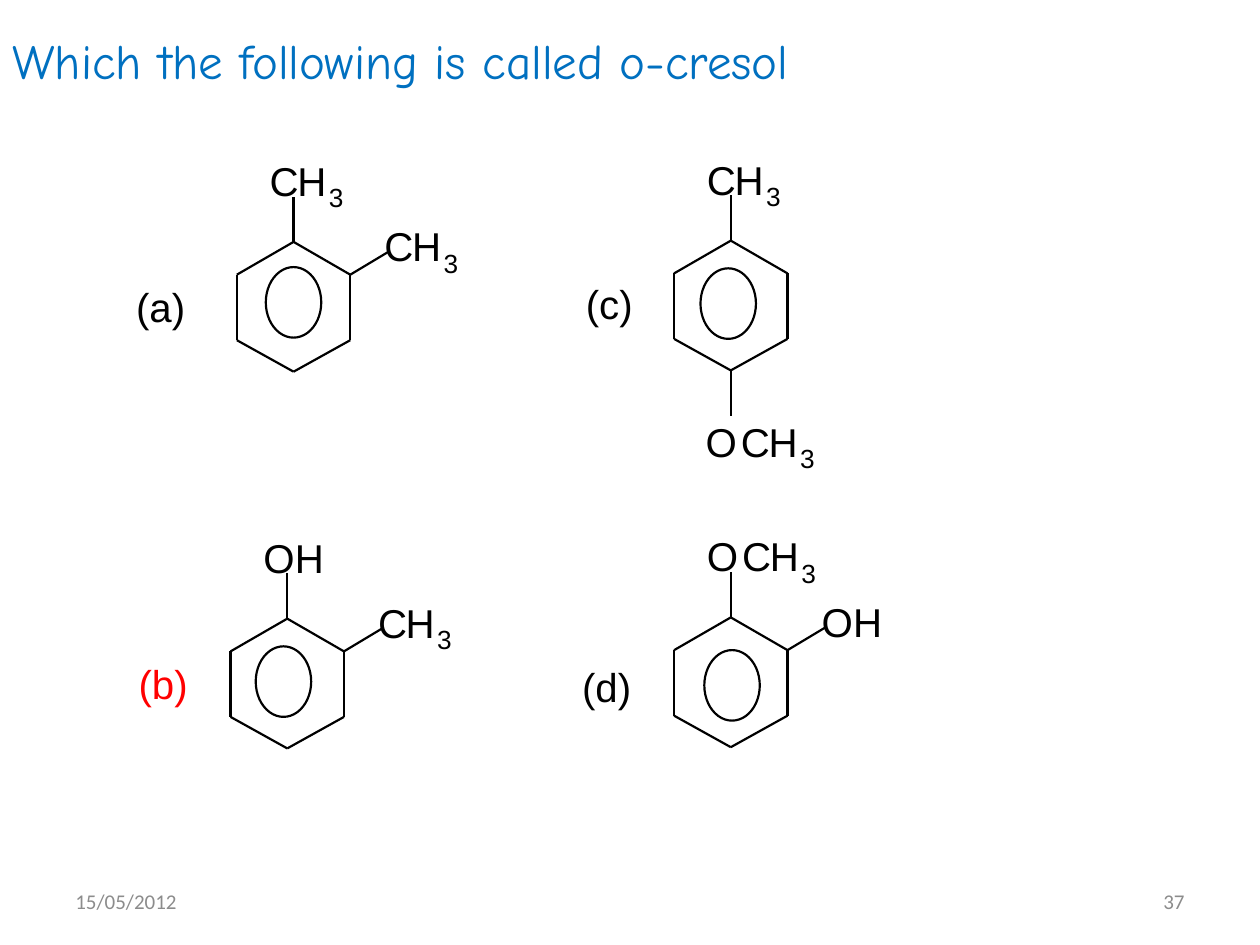
import itertools

import pptx
import pptx.dml.color
import pptx.enum.shapes
import pptx.enum.text
import pptx.oxml.ns
import pptx.util
from lxml import etree

Inches = pptx.util.Inches
ALIGN = pptx.enum.text.PP_ALIGN
ANCHOR = pptx.enum.text.MSO_ANCHOR

TITLE = "Which the following is called o-cresol"
DATE = "15/05/2012"
PAGE_NUMBER = "37"

MOLECULES = [
    {"label": "(a)", "label_at": (1.08, 2.24), "apex": (2.33, 1.92), "circle_at": (2.11, 2.12),
     "groups": {"top": "CH3", "right": "CH3"}},
    {"label": "(b)", "label_at": (1.1, 5.23), "apex": (2.28, 4.91), "circle_at": (2.03, 5.13),
     "groups": {"top": "OH", "right": "CH3"}, "correct": True},
    {"label": "(c)", "label_at": (4.65, 2.22), "apex": (5.8, 1.91), "circle_at": (5.56, 2.13),
     "groups": {"top": "CH3", "bottom": "OCH3"}},
    {"label": "(d)", "label_at": (4.62, 5.26), "apex": (5.8, 4.9), "circle_at": (5.59, 5.16),
     "groups": {"top": "OCH3", "right": "OH"}},
]

THEME = {
    "title": ("Comic Neue", 28, "0070C0"),
    "footer": ("Calibri", 12, "8C8C8C"),
    "atom": ("Arial", 23, "000000"),
    "count": ("Arial", 15, "000000"),
    "answer": ("Arial", 23, "FF0000"),
    "line": ("000000", 1.25),
}

RING = [(0, 0), (0.45, 0.26), (0.45, 0.78), (0, 1.03), (-0.45, 0.78), (-0.45, 0.26)]
CIRCLE_SIZE = (0.44, 0.56)
BONDS = {
    "top": ((0, 0), (0, -0.36)),
    "right": ((0.45, 0.26), (0.75, 0.08)),
    "bottom": ((0, 1.03), (0, 1.39)),
}
GROUP_OFFSETS = {"top": (-0.19, -0.68), "right": (0.72, -0.16), "bottom": (-0.2, 1.4)}
ADVANCES = {"OC": 0.28, "OH": 0.25, "CH": 0.22, "H3": 0.25}
ATOM_SIZE = (0.38, 0.43)
COUNT_SIZE = (0.21, 0.28)
COUNT_DROP = 0.2
LABEL_SIZE = (0.53, 0.43)


def color(value):
    return pptx.dml.color.RGBColor.from_string(value)


def shift(origin, offset):
    return origin[0] + offset[0], origin[1] + offset[1]


def style_line(shape):
    line_color, width = THEME["line"]
    shape.line.color.rgb = color(line_color)
    shape.line.width = pptx.util.Pt(width)


def add_text(slide, text, position, size, style, inset=0, anchor=ANCHOR.TOP, alignment=ALIGN.LEFT):
    shape = slide.shapes.add_textbox(*map(Inches, position + size))
    frame = shape.text_frame
    frame.word_wrap = True
    frame.vertical_anchor = anchor
    frame.margin_left = frame.margin_right = Inches(inset)
    frame.margin_top = frame.margin_bottom = Inches(inset / 2)
    paragraph = frame.paragraphs[0]
    paragraph.text = text
    paragraph.alignment = alignment
    font_name, font_size, font_color = THEME[style]
    paragraph.font.name = font_name
    paragraph.font.size = pptx.util.Pt(font_size)
    paragraph.font.color.rgb = color(font_color)


def add_bond(slide, start, end):
    connector = slide.shapes.add_connector(
        pptx.enum.shapes.MSO_CONNECTOR.STRAIGHT, *map(Inches, start + end))
    style_line(connector)
    etree.SubElement(connector._element.spPr, pptx.oxml.ns.qn("a:effectLst"))


def add_formula(slide, formula, position):
    left, top = position
    for symbol, following in itertools.zip_longest(formula, formula[1:], fillvalue=""):
        if symbol.isdigit():
            add_text(slide, symbol, (left, top + COUNT_DROP), COUNT_SIZE, "count")
        else:
            add_text(slide, symbol, (left, top), ATOM_SIZE, "atom")
        left += ADVANCES.get(symbol + following, 0)


def add_molecule(slide, molecule):
    apex = molecule["apex"]
    corners = [shift(apex, offset) for offset in RING]
    for start, end in zip(corners, corners[1:] + corners[:1]):
        add_bond(slide, start, end)
    for place, formula in molecule["groups"].items():
        add_bond(slide, *(shift(apex, offset) for offset in BONDS[place]))
        add_formula(slide, formula, shift(apex, GROUP_OFFSETS[place]))
    circle = slide.shapes.add_shape(
        pptx.enum.shapes.MSO_SHAPE.OVAL, *map(Inches, molecule["circle_at"] + CIRCLE_SIZE))
    circle.shadow.inherit = False
    circle.fill.background()
    style_line(circle)
    style = "answer" if molecule.get("correct") else "atom"
    add_text(slide, molecule["label"], molecule["label_at"], LABEL_SIZE, style)


def main():
    presentation = pptx.Presentation()
    presentation.slide_width = Inches(10)
    presentation.slide_height = Inches(7.5)
    slide = presentation.slides.add_slide(presentation.slide_layouts[6])
    add_text(slide, TITLE, (0, 0.19), (7.06, 1.04), "title", inset=0.1)
    add_text(slide, PAGE_NUMBER, (7.17, 6.95), (2.33, 0.4), "footer", 0.1, ANCHOR.MIDDLE, ALIGN.RIGHT)
    add_text(slide, DATE, (0.5, 6.95), (2.33, 0.4), "footer", 0.1, ANCHOR.MIDDLE)
    for molecule in MOLECULES:
        add_molecule(slide, molecule)
    presentation.save("out.pptx")


if __name__ == "__main__":
    main()
